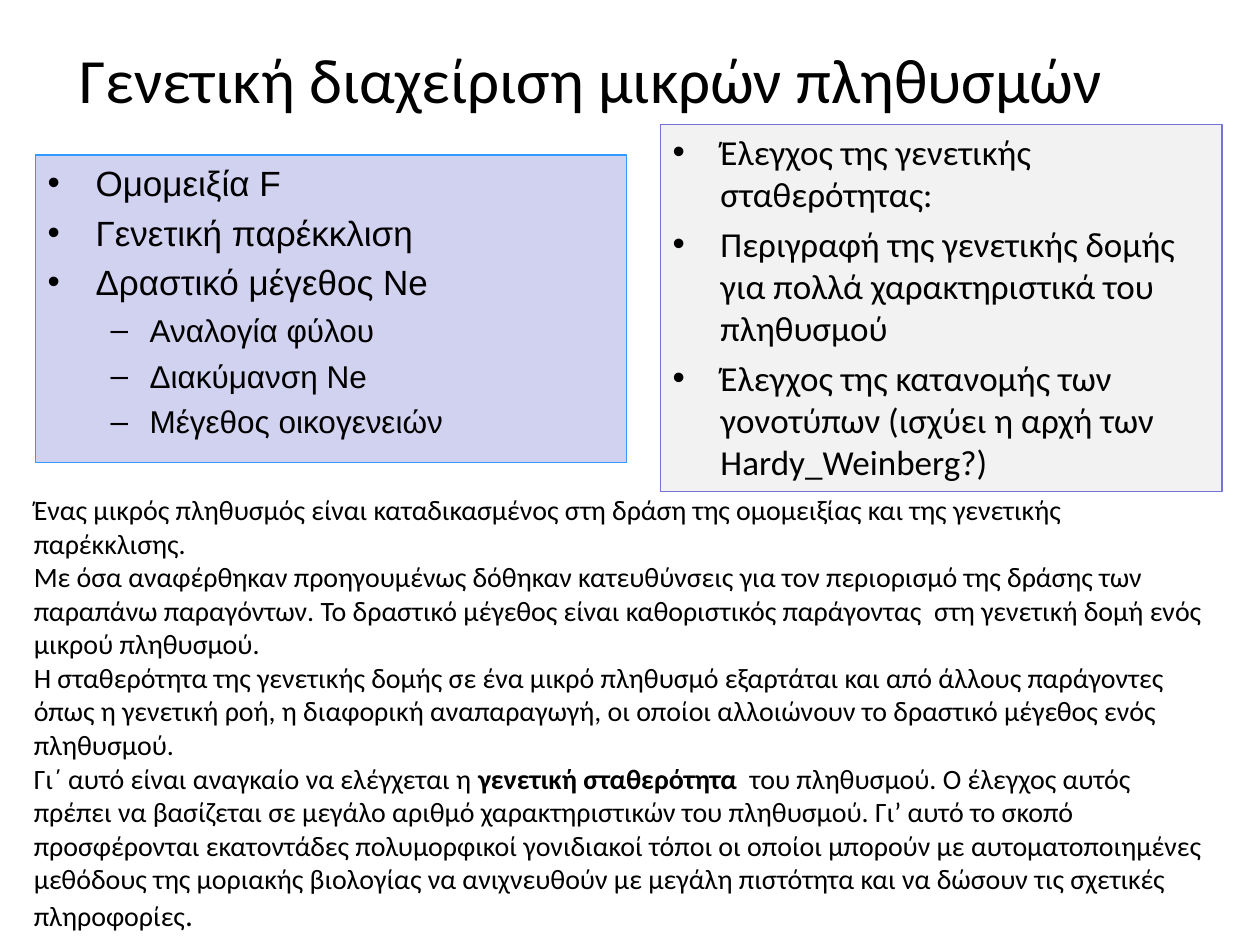
from dataclasses import dataclass

from lxml.etree import SubElement
from pptx import Presentation
from pptx.dml.color import RGBColor
from pptx.enum.shapes import MSO_SHAPE as Shape
from pptx.enum.text import MSO_ANCHOR as Anchor, PP_ALIGN as Align
from pptx.oxml.ns import qn
from pptx.util import Inches, Pt


@dataclass(frozen=True)
class Theme:
    heading: str = "Calibri"
    factors: str = "Arial"
    ink: str = "000000"
    lavender: str = "D1D1F0"
    blue: str = "3399FF"
    grey: str = "F2F2F2"
    violet: str = "7575D1"
    title_size: int = 36
    level_sizes: tuple = (20, 18)
    body_size: int = 16
    closing_size: int = 18
    bullet_gap: float = 4.5


THEME = Theme()
LEVELS = (("•", 0.38, 0.38), ("–", 0.81, 0.31))

FACTORS = (
    (0, "Ομομειξία F"),
    (0, "Γενετική παρέκκλιση"),
    (0, "Δραστικό μέγεθος Ne"),
    (1, "Αναλογία φύλου"),
    (1, "Διακύμανση Ne"),
    (1, "Μέγεθος οικογενειών"),
)
CHECKS = (
    (0, "Έλεγχος της γενετικής σταθερότητας:"),
    (0, "Περιγραφή της γενετικής δομής για πολλά χαρακτηριστικά του πληθυσμού"),
    (0, "Έλεγχος της κατανομής των γονοτύπων (ισχύει η αρχή των Hardy_Weinberg?)"),
)
BODY = THEME.body_size
EXPLANATION = (
    (("Ένας μικρός πληθυσμός είναι καταδικασμένος στη δράση της ομομειξίας "
      "και της γενετικής παρέκκλισης.", BODY, False),),
    (("Με όσα αναφέρθηκαν προηγουμένως δόθηκαν κατευθύνσεις για τον περιορισμό "
      "της δράσης των παραπάνω παραγόντων. Το δραστικό μέγεθος είναι καθοριστικός "
      "παράγοντας  στη γενετική δομή ενός μικρού πληθυσμού.", BODY, False),),
    (("Η σταθερότητα της γενετικής δομής σε ένα μικρό πληθυσμό εξαρτάται και από "
      "άλλους παράγοντες όπως η γενετική ροή, η διαφορική αναπαραγωγή, οι οποίοι "
      "αλλοιώνουν το δραστικό μέγεθος ενός πληθυσμού.", BODY, False),),
    (("Γι΄ αυτό είναι αναγκαίο να ελέγχεται η ", BODY, False),
     ("γενετική σταθερότητα  ", BODY, True),
     ("του πληθυσμού. Ο έλεγχος αυτός πρέπει να βασίζεται σε μεγάλο αριθμό "
      "χαρακτηριστικών του πληθυσμού. Γι’ αυτό το σκοπό προσφέρονται εκατοντάδες "
      "πολυμορφικοί γονιδιακοί τόποι οι οποίοι μπορούν με αυτοματοποιημένες "
      "μεθόδους της μοριακής βιολογίας να ανιχνευθούν με μεγάλη πιστότητα και να "
      "δώσουν τις σχετικές πληροφορίες", BODY, False),
     (".", THEME.closing_size, False)),
)


def add_run(paragraph, wording, size, font=THEME.heading, bold=False):
    run = paragraph.add_run()
    run.text = wording
    run.font.name = font
    run.font.size = Pt(size)
    run.font.bold = bold
    run.font.color.rgb = RGBColor.from_string(THEME.ink)


def paragraphs_for(frame, items):
    for index, item in enumerate(items):
        yield (frame.add_paragraph() if index else frame.paragraphs[0]), item


def set_bullet(paragraph, level):
    mark, margin, hanging = LEVELS[level]
    paragraph.level = level
    paragraph.space_before = Pt(THEME.bullet_gap)
    properties = paragraph._p.get_or_add_pPr()
    properties.set("marL", str(Inches(margin)))
    properties.set("indent", str(-Inches(hanging)))
    SubElement(properties, qn("a:buFont"), typeface="Arial")
    SubElement(properties, qn("a:buChar"), char=mark)


def add_title(slide, box, wording):
    frame = slide.shapes.add_textbox(*map(Inches, box)).text_frame
    frame.word_wrap = True
    frame.vertical_anchor = Anchor.MIDDLE
    heading = frame.paragraphs[0]
    heading.alignment = Align.CENTER
    add_run(heading, wording, THEME.title_size)


def add_bullet_panel(slide, box, points, fill, outline, font):
    panel = slide.shapes.add_shape(Shape.RECTANGLE, *map(Inches, box))
    panel.shadow.inherit = False
    panel.fill.solid()
    panel.fill.fore_color.rgb = RGBColor.from_string(fill)
    panel.line.color.rgb = RGBColor.from_string(outline)
    panel.line.width = Pt(0.75)
    frame = panel.text_frame
    frame.word_wrap = True
    frame.vertical_anchor = Anchor.TOP
    for paragraph, (level, wording) in paragraphs_for(frame, points):
        paragraph.alignment = Align.LEFT
        set_bullet(paragraph, level)
        add_run(paragraph, wording, THEME.level_sizes[level], font)


def add_explanation(slide, box, passages):
    frame = slide.shapes.add_textbox(*map(Inches, box)).text_frame
    frame.word_wrap = True
    for paragraph, passage in paragraphs_for(frame, passages):
        for wording, size, bold in passage:
            add_run(paragraph, wording, size, bold=bold)


def main():
    deck = Presentation()
    deck.slide_width, deck.slide_height = Inches(10), Inches(7.5)
    slide = deck.slides.add_slide(deck.slide_layouts[6])
    add_title(slide, (0.19, 0.26, 9, 0.73), "Γενετική διαχείριση μικρών πληθυσμών")
    add_bullet_panel(slide, (0.28, 1.23, 4.69, 2.44), FACTORS,
                     THEME.lavender, THEME.blue, THEME.factors)
    add_bullet_panel(slide, (5.24, 0.99, 4.46, 2.91), CHECKS,
                     THEME.grey, THEME.violet, THEME.heading)
    add_explanation(slide, (0.17, 3.86, 9.5, 3.64), EXPLANATION)
    deck.save("out.pptx")


if __name__ == "__main__":
    main()
